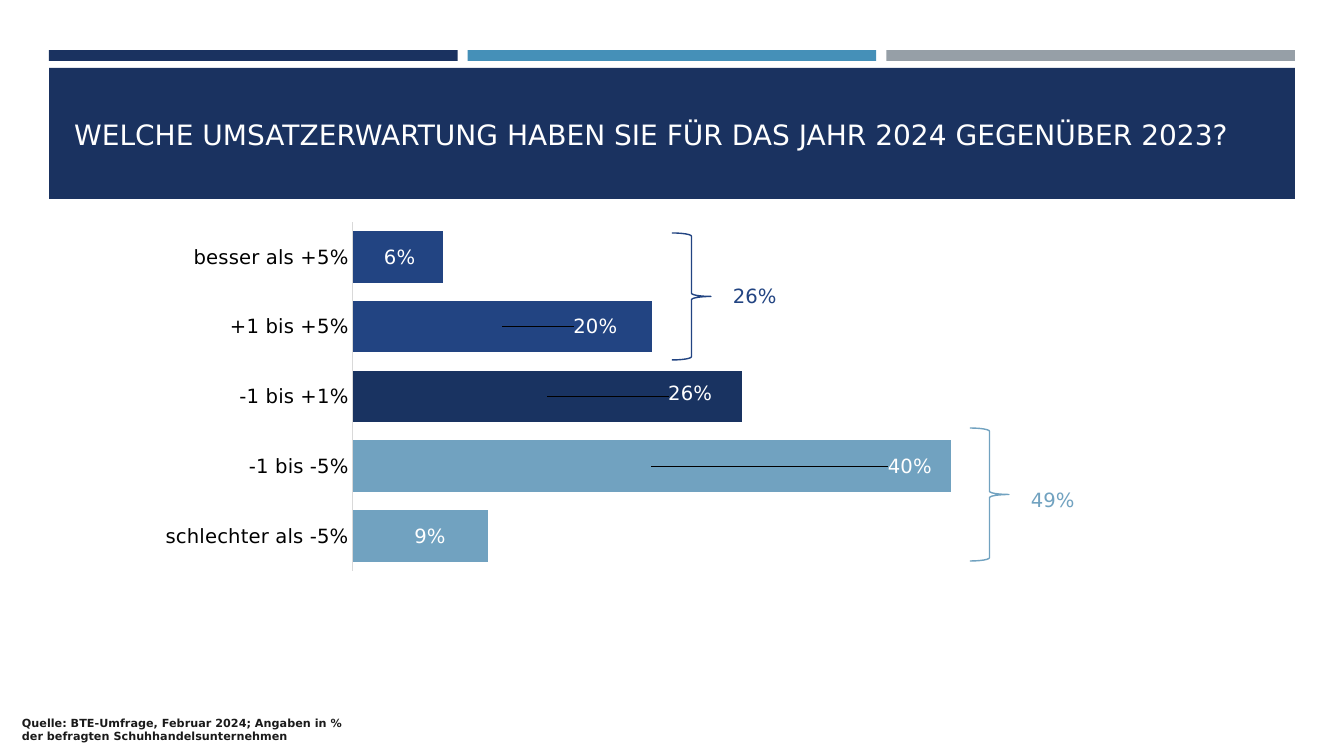
from lxml import etree
from pptx import Presentation
from pptx import util as u
from pptx.chart.data import CategoryChartData
from pptx.dml.color import RGBColor
from pptx.enum import chart as charts, shapes, text
from pptx.oxml import ns

WIDTH, HEIGHT = 1344, 756
SCALE = 12192000 / WIDTH
FONT = "DejaVu Sans"
NAVY, BLUE, LIGHT_BLUE = "1A3260", "224482", "71A2C0"
LABEL_SIZE = 14

# Category, value, bar colour, shift of the label from the bar's centre in px
ANSWERS = [
    ("schlechter als -5%", 0.09, LIGHT_BLUE, (10, 0)),
    ("-1 bis -5%", 0.40, LIGHT_BLUE, (258, 0)),
    ("-1 bis +1%", 0.26, "193361", (143, -3)),
    ("+1 bis +5%", 0.20, BLUE, (93, 0)),
    ("besser als +5%", 0.06, BLUE, (2, 0)),
]


def px(length):
    return u.Emu(round(length * SCALE))


def color(value):
    return RGBColor.from_string(value)


def style_font(font, size, value, bold=False):
    font.name, font.size, font.bold = FONT, u.Pt(size), bold
    font.color.rgb = color(value)


def add_bar(slide, left, top, width, height, fill):
    bar = slide.shapes.add_shape(shapes.MSO_SHAPE.RECTANGLE,
                                 *map(px, (left, top, width, height)))
    bar.shadow.inherit = False
    bar.fill.solid()
    bar.fill.fore_color.rgb = color(fill)
    bar.line.fill.background()


def add_text(slide, left, top, width, height, wording, size, value, bold=False):
    box = slide.shapes.add_textbox(*map(px, (left, top, width, height)))
    box.text_frame.word_wrap = True
    box.text_frame.text = wording
    style_font(box.text_frame.paragraphs[0].runs[0].font, size, value, bold)


def add_header(slide, left, top, width, wording):
    # Three strips above the title band
    gap = 10
    strip = (width - 2 * gap) / 3
    for index, fill in enumerate((NAVY, "4590B8", "969FA7")):
        add_bar(slide, left + index * (strip + gap), top, strip, 11, fill)
    add_bar(slide, left, top + 18, width, 131, NAVY)

    # Title, brought in front of the band
    title = slide.shapes.title
    slide.shapes._spTree.append(title._element)
    title.left, title.top, title.width, title.height = map(
        px, (left + 15, top + 28, width - 31, 112))
    frame = title.text_frame
    frame.text = wording
    frame.word_wrap = True
    frame.auto_size = text.MSO_AUTO_SIZE.NONE
    frame.vertical_anchor = text.MSO_ANCHOR.MIDDLE
    frame.paragraphs[0].alignment = text.PP_ALIGN.LEFT
    style_font(frame.paragraphs[0].runs[0].font, 20, "FFFFFF")


def manual_layout(**values):
    layout = etree.Element(ns.qn("c:layout"))
    manual = etree.SubElement(layout, ns.qn("c:manualLayout"))
    for tag, value in values.items():
        etree.SubElement(manual, ns.qn(f"c:{tag}")).set("val", str(value))
    return layout


def add_answer_chart(slide, left, top, width, height):
    data = CategoryChartData(number_format="0%")
    data.categories = [answer[0] for answer in ANSWERS]
    data.add_series("Series 1", [answer[1] for answer in ANSWERS])
    chart = slide.shapes.add_chart(charts.XL_CHART_TYPE.BAR_CLUSTERED,
                                   *map(px, (left, top, width, height)), data).chart
    chart.has_legend = chart.has_title = False
    style_font(chart.font, LABEL_SIZE, "000000")

    # Axes
    category_axis, value_axis = chart.category_axis, chart.value_axis
    category_axis.major_tick_mark = charts.XL_TICK_MARK.NONE
    category_axis.format.line.color.rgb = color("D9D9D9")
    category_axis.format.line.width = u.Pt(0.75)
    style_font(category_axis.tick_labels.font, LABEL_SIZE, "000000")
    value_axis.minimum_scale, value_axis.maximum_scale = 0, 0.45
    value_axis.has_major_gridlines = False
    value_axis.visible = False

    # Plot area inside the chart's box
    plot_area = chart._chartSpace.chart.plotArea
    for layout in plot_area.findall(ns.qn("c:layout")):
        plot_area.remove(layout)
    plot_area.insert(0, manual_layout(
        layoutTarget="inner", xMode="edge", yMode="edge",
        x=205 / width, y=7 / height, w=673 / width, h=349 / height))

    # Bars and their labels
    plot = chart.plots[0]
    plot.gap_width, plot.overlap, plot.vary_by_categories = 35, 22, False
    series = plot.series[0]
    for index, (_, _, fill, (shift_x, shift_y)) in enumerate(ANSWERS):
        point = series.points[index]
        point.format.fill.solid()
        point.format.fill.fore_color.rgb = color(fill)
        label = point.data_label
        style_font(label.font, LABEL_SIZE, "FFFFFF")
        label.position = charts.XL_LABEL_POSITION.CENTER
        label._dLbl.insert(1, manual_layout(x=shift_x / width, y=shift_y / height))


def add_sum(slide, left, top, height, wording, value, text_top):
    brace = slide.shapes.add_shape(shapes.MSO_SHAPE.RIGHT_BRACE,
                                   *map(px, (left, top, 39, height)))
    brace.shadow.inherit = False
    brace.fill.background()
    brace.line.color.rgb = color(value)
    brace.line.width = u.Pt(1)
    add_text(slide, left + 51, text_top, 81, 34, wording, LABEL_SIZE, value)


def main():
    presentation = Presentation()
    presentation.slide_width, presentation.slide_height = px(WIDTH), px(HEIGHT)
    slide = presentation.slides.add_slide(presentation.slide_layouts[5])

    add_header(slide, 49, 50, 1246,
               "WELCHE UMSATZERWARTUNG HABEN SIE FÜR DAS JAHR 2024 GEGENÜBER 2023?")
    add_answer_chart(slide, 148, 215, 896, 364)
    add_sum(slide, 672, 233, 127, "26%", BLUE, 279)
    add_sum(slide, 970, 428, 133, "49%", LIGHT_BLUE, 483)
    add_text(slide, 12, 711, 352, 37,
             "Quelle: BTE-Umfrage, Februar 2024; Angaben in % der befragten "
             "Schuhhandelsunternehmen", 8, "1A1A1A", bold=True)
    presentation.save("out.pptx")


if __name__ == "__main__":
    main()
